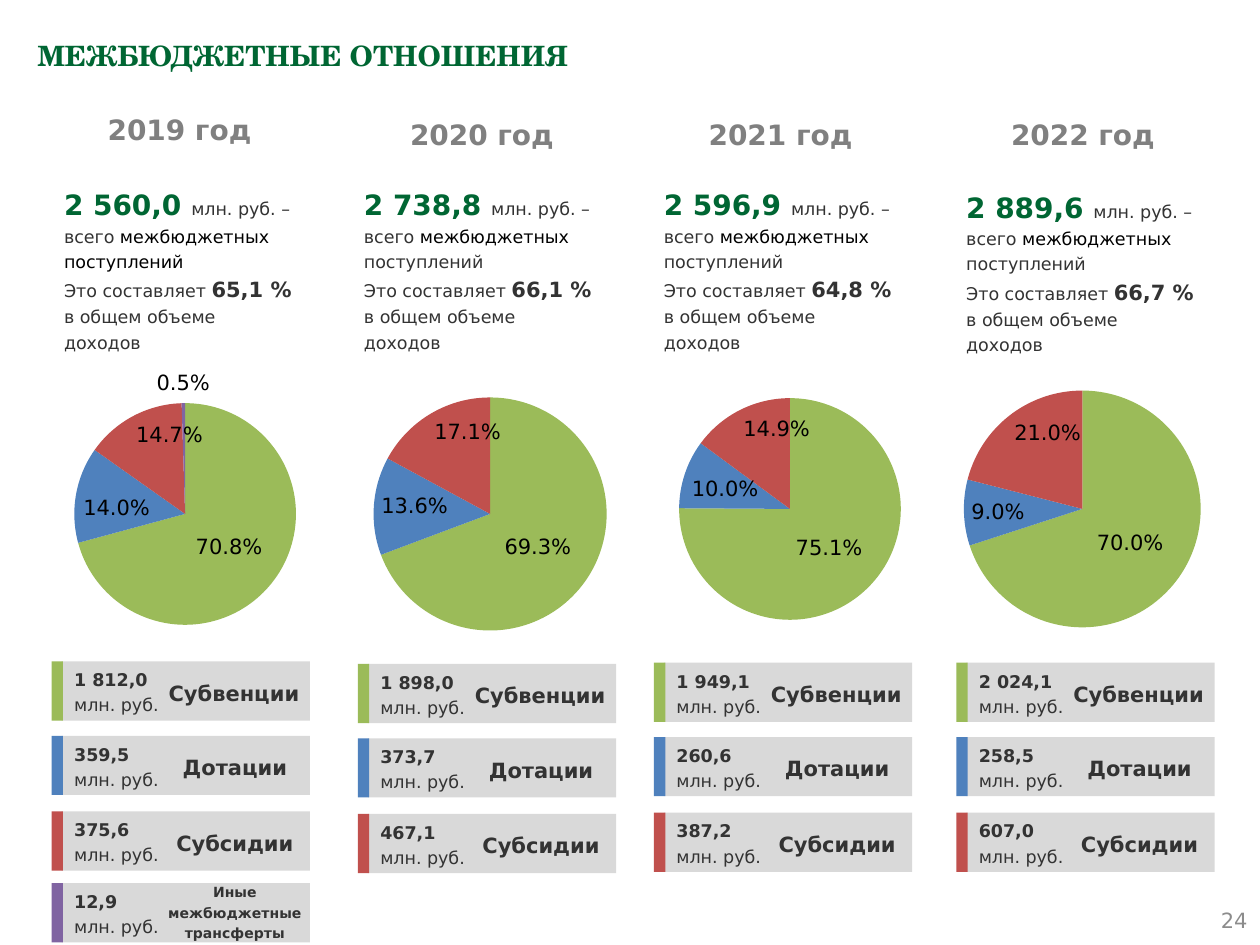
from pptx import Presentation
from pptx.chart.data import CategoryChartData
from pptx.dml.color import RGBColor
from pptx.enum import chart as ch, shapes, text
from pptx.oxml import parse_xml
from pptx.oxml.ns import nsdecls
from pptx.util import Inches, Pt

COLORS = {
    "title": "006633", "heading": "808080", "body": "333333", "black": "000000",
    "number": "8C8C8C", "panel": "D9D9D9",
    "Субвенции": "9BBB59", "Дотации": "4F81BD", "Субсидии": "C0504D",
    "Иные межбюджетные трансферты": "8064A2",
}
KINDS = ["Субвенции", "Дотации", "Субсидии", "Иные межбюджетные трансферты"]
ROW_OFFSETS = [0, 0.59, 1.19, 1.76]
BODY_FONT = "DejaVu Sans"
LEFT, CENTER, RIGHT = text.PP_ALIGN.LEFT, text.PP_ALIGN.CENTER, text.PP_ALIGN.RIGHT

# heading, summary, chart and panel: left and top; pie: centre x, centre y, diameter
YEARS = [
    dict(year="2019", total="2 560,0", share="65,1",
         heading=(0.5, 0.79), summary=(0.41, 1.39), chart=(-0.33, 2.81),
         pie=(1.47, 4.08, 1.76), panel=(0.41, 5.25),
         parts=[0.708, 0.14, 0.147, 0.005],
         amounts=["1 812,0", "359,5", "375,6", "12,9"]),
    dict(year="2020", total="2 738,8", share="66,1",
         heading=(2.9, 0.83), summary=(2.79, 1.39), chart=(2.09, 2.83),
         pie=(3.89, 4.08, 1.85), panel=(2.84, 5.27),
         parts=[0.693, 0.136, 0.171],
         amounts=["1 898,0", "373,7", "467,1"]),
    dict(year="2021", total="2 596,9", share="64,8",
         heading=(5.27, 0.83), summary=(5.17, 1.39), chart=(4.44, 2.82),
         pie=(6.27, 4.04, 1.76), panel=(5.19, 5.26),
         parts=[0.751, 0.1, 0.149],
         amounts=["1 949,1", "260,6", "387,2"]),
    dict(year="2022", total="2 889,6", share="66,7",
         heading=(7.67, 0.83), summary=(7.57, 1.41), chart=(6.84, 2.82),
         pie=(8.59, 4.04, 1.88), panel=(7.59, 5.26),
         parts=[0.7, 0.09, 0.21],
         amounts=["2 024,1", "258,5", "607,0"]),
]


def rgb(name):
    return RGBColor.from_string(COLORS[name])


def add_text(s, box, paragraphs, align=LEFT, font=BODY_FONT, spacing=1.2):
    """Each paragraph is a list of runs: (text, size, colour name, bold)."""
    tf = s.shapes.add_textbox(*map(Inches, box)).text_frame
    tf.word_wrap = True
    for i, runs in enumerate(paragraphs):
        p = tf.paragraphs[0] if i == 0 else tf.add_paragraph()
        p.alignment = align
        p.line_spacing = spacing
        for words, size, color, bold in runs:
            r = p.add_run()
            r.text = words
            r.font.name = font
            r.font.size = Pt(size)
            r.font.bold = bold
            r.font.color.rgb = rgb(color)
    return tf


def add_rect(s, box, color):
    sp = s.shapes.add_shape(shapes.MSO_SHAPE.RECTANGLE, *map(Inches, box))
    sp.shadow.inherit = False
    sp.fill.solid()
    sp.fill.fore_color.rgb = rgb(color)
    sp.line.fill.background()


def add_summary(s, data):
    last_color = "black" if data["year"] == "2019" else "body"
    add_text(s, (*data["summary"], 2.05, 1.27), [
        [(data["total"] + " ", 16, "title", True),
         ("млн. руб. –", 10, "body", False)],
        [("всего ", 10, "body", False),
         ("межбюджетных ", 10, "black", False),
         ("поступлений", 10, last_color, False)],
        [("Это составляет ", 10, "body", False),
         (data["share"] + " % ", 12, "body", True),
         ("в общем объеме доходов", 10, "body", False)],
    ])


def place_pie(chart, left, top, width, height, pie):
    """Fix the plot area so that the pie has the given centre and diameter."""
    x, y, d = pie
    fractions = {"x": (x - d / 2 - left) / width, "y": (y - d / 2 - top) / height,
                 "w": d / width, "h": d / height}
    values = "".join(f'<c:{k} val="{v:.4f}"/>' for k, v in fractions.items())
    layout = parse_xml(
        f'<c:layout {nsdecls("c")}><c:manualLayout><c:layoutTarget val="inner"/>'
        f'<c:xMode val="edge"/><c:yMode val="edge"/>{values}'
        '</c:manualLayout></c:layout>')
    plot_area = chart._chartSpace.chart.plotArea
    for old in plot_area.findall(layout.tag):
        plot_area.remove(old)
    plot_area.insert(0, layout)


def add_pie(s, data):
    box = (*data["chart"], 3.51, 2.34)
    parts = data["parts"]
    cd = CategoryChartData(number_format="0.0%")
    cd.categories = [str(i + 1) for i in range(len(parts))]
    cd.add_series("Series 1", parts)
    chart = s.shapes.add_chart(ch.XL_CHART_TYPE.PIE, *map(Inches, box), cd).chart
    chart.has_legend = False
    chart.has_title = False
    chart.font.name = "Calibri"
    chart.font.size = Pt(18)
    chart.font.color.rgb = rgb("black")
    place_pie(chart, *box, data["pie"])

    plot = chart.plots[0]
    plot.vary_by_categories = True
    plot.has_data_labels = True
    plot.data_labels.show_value = True
    plot.data_labels.show_percentage = False
    plot.data_labels.number_format = "0.0%"
    plot.data_labels.number_format_is_linked = False

    pos = ch.XL_LABEL_POSITION
    positions = [pos.CENTER, pos.INSIDE_END, pos.INSIDE_END, pos.OUTSIDE_END]
    for i, (kind, position) in enumerate(zip(KINDS, positions[:len(parts)])):
        point = plot.series[0].points[i]
        point.format.fill.solid()
        point.format.fill.fore_color.rgb = rgb(kind)
        point.format.line.fill.background()
        label = point.data_label
        label.font.size = Pt(12)
        label.font.name = BODY_FONT
        label.font.color.rgb = rgb("black")
        label.position = position


def add_amount(s, x, y, kind, amount):
    """A grey panel with a coloured edge, the sum and the kind of transfer."""
    add_rect(s, (x + 0.08, y, 1.97, 0.47), "panel")
    add_rect(s, (x, y, 0.09, 0.47), kind)
    add_text(s, (x + 0.08, y - 0.02, 0.98, 0.5),
             [[(amount, 10, "body", True)], [("млн. руб.", 10, "body", False)]])
    if kind == KINDS[0]:
        box, size, align = (x + 0.83, y + 0.06, 1.47, 0.34), 12, LEFT
    elif kind == KINDS[-1]:
        box, size, align = (x + 0.72, y - 0.07, 1.47, 0.57), 8, CENTER
    else:
        box, size, align = (x + 0.72, y + 0.06, 1.47, 0.32), 12, CENTER
    add_text(s, box, [[(kind, size, "body", True)]], align)


def add_year(s, data):
    add_text(s, (*data["heading"], 1.85, 0.42),
             [[(data["year"] + " год", 16, "heading", True)]], CENTER)
    add_summary(s, data)
    add_pie(s, data)
    x, y = data["panel"]
    for kind, offset, amount in zip(KINDS, ROW_OFFSETS, data["amounts"]):
        add_amount(s, x, y + offset, kind, amount)


def main():
    prs = Presentation()
    prs.slide_width, prs.slide_height = Inches(10), Inches(7.5)
    s = prs.slides.add_slide(prs.slide_layouts[6])
    add_text(s, (0.2, 0.2, 9.61, 0.79),
             [[("МЕЖБЮДЖЕТНЫЕ ОТНОШЕНИЯ", 16, "title", True)]],
             font="TeX Gyre Schola")
    number = add_text(s, (7.67, 7.1, 2.33, 0.4),
                      [[("24", 12, "number", False)]], RIGHT, spacing=1)
    number.vertical_anchor = text.MSO_ANCHOR.MIDDLE
    for data in YEARS:
        add_year(s, data)
    prs.save("out.pptx")


if __name__ == "__main__":
    main()
